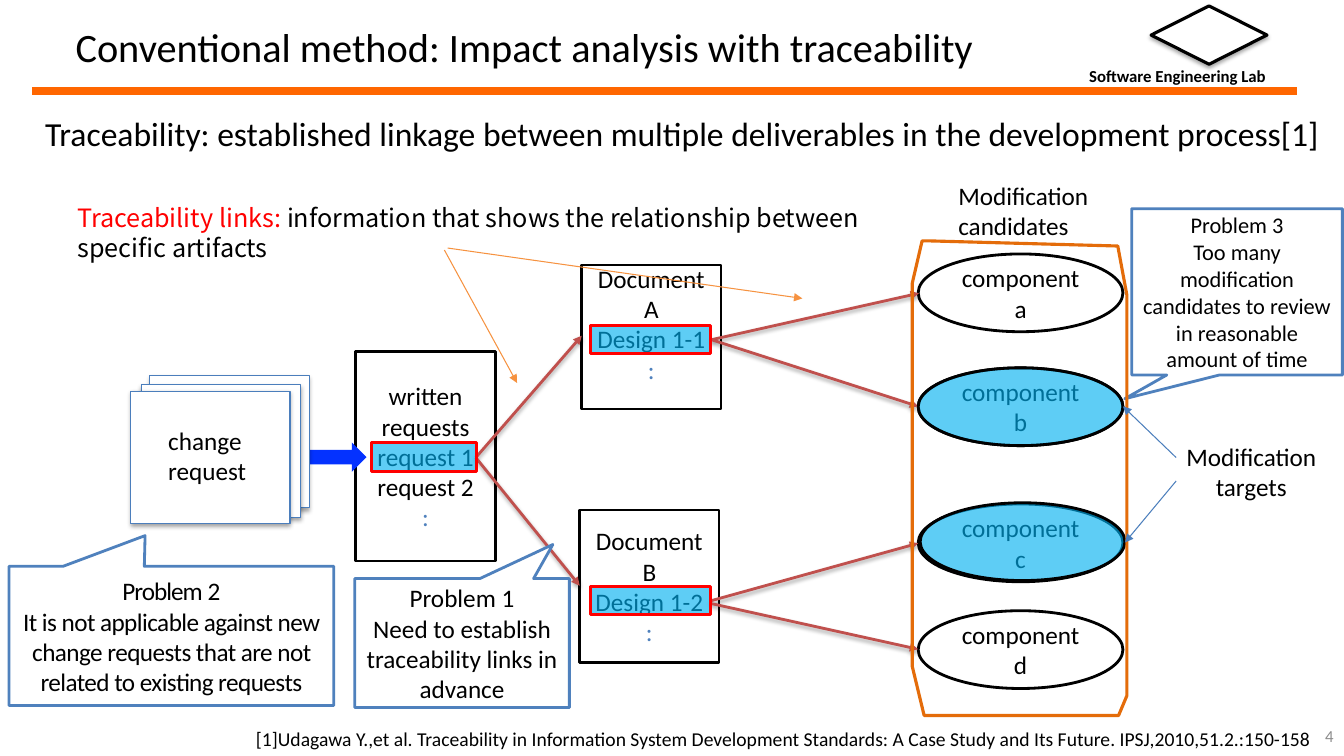
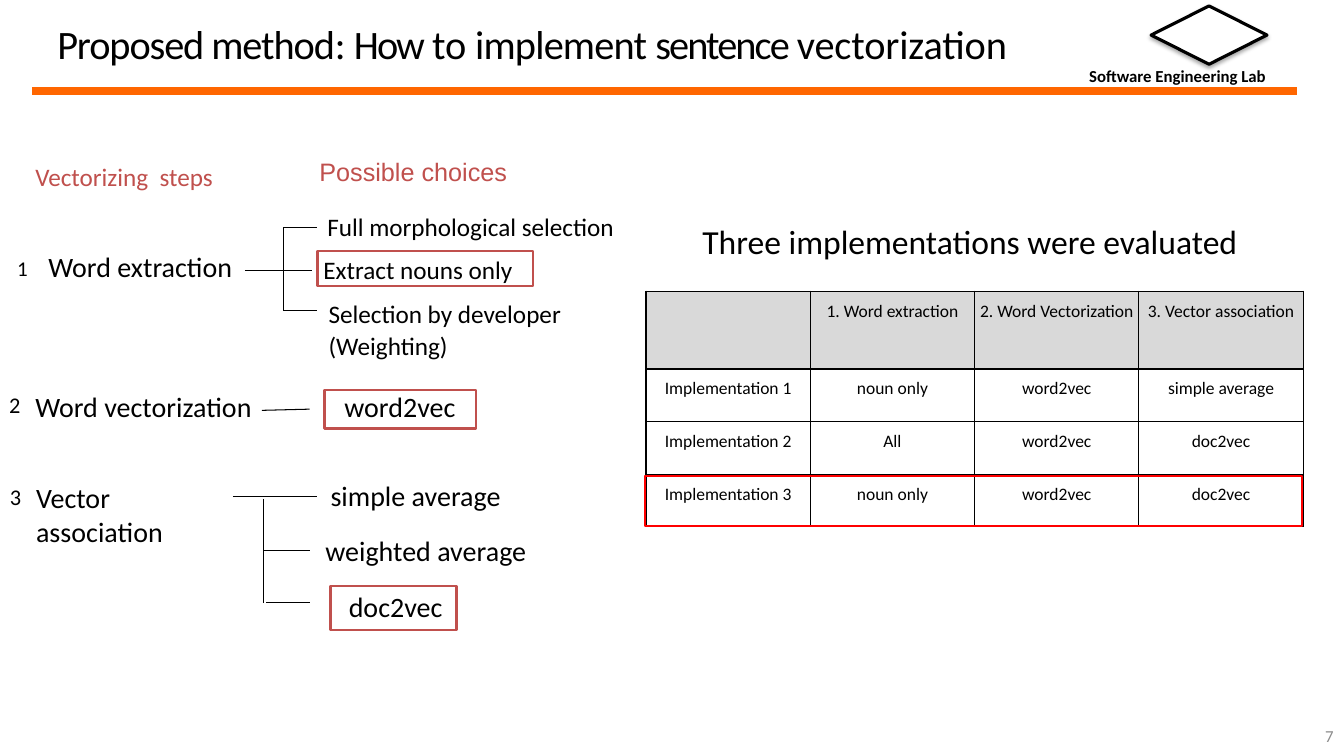
from dataclasses import dataclass
from typing import NamedTuple, Optional, Sequence

from lxml.etree import SubElement
from pptx import Presentation
from pptx.dml.color import RGBColor
from pptx.enum.shapes import MSO_CONNECTOR, MSO_SHAPE as Preset
from pptx.enum.text import MSO_ANCHOR as Anchor, MSO_AUTO_SIZE as AutoSize, PP_ALIGN as Align
from pptx.oxml.ns import qn
from pptx.util import Cm, Pt

BLACK = RGBColor(0x00, 0x00, 0x00)
WHITE = RGBColor(0xFF, 0xFF, 0xFF)
RED = RGBColor(0xFF, 0x00, 0x00)
BRICK = RGBColor(0xC0, 0x50, 0x4D)
BLUE = RGBColor(0x4F, 0x81, 0xBD)
EDGE_BLUE = RGBColor(0x4B, 0x7E, 0xBC)
VIVID_BLUE = RGBColor(0x04, 0x32, 0xFF)
SKY = RGBColor(0x00, 0xB0, 0xF0)
BAND = RGBColor(0xFF, 0x66, 0x00)
ORANGE = RGBColor(0xE4, 0x6C, 0x0A)
POINTER = RGBColor(0xF6, 0x92, 0x40)
GREY = RGBColor(0x8C, 0x8C, 0x8C)
HEADER = RGBColor(0xD9, 0xD9, 0xD9)


class Box(NamedTuple):
    """Left, top, width and height in centimetres."""
    left: float
    top: float
    width: float
    height: float

    def lengths(self) -> list:
        """Give the four values as lengths."""
        return [Cm(value) for value in self]


class Span(NamedTuple):
    """Text with its letter spacing and colour."""
    text: str
    spacing: float = 0
    color: RGBColor = BLACK


@dataclass(frozen=True)
class Style:
    """Look of the text in one frame."""
    size: float = 18
    color: RGBColor = BLACK
    font: str = "Calibri"
    bold: bool = False
    align: Align = Align.LEFT
    anchor: Anchor = Anchor.TOP
    tight: bool = False
    wrap: bool = True
    indent: float = 0
    before: float = 0


@dataclass(frozen=True)
class Label:
    """A text box."""
    box: Box
    lines: tuple
    style: Style = Style()


@dataclass(frozen=True)
class Figure:
    """A preset shape."""
    box: Box
    kind: Preset = Preset.RECTANGLE
    fill: Optional[RGBColor] = WHITE
    line: Optional[RGBColor] = BLACK
    weight: float = 2
    opacity: int = 100
    shadow: bool = False
    adjust: tuple = ()
    lines: tuple = ()
    style: Style = Style(align=Align.CENTER, anchor=Anchor.MIDDLE)


@dataclass(frozen=True)
class Stroke:
    """Line work shared by a set of connectors."""
    color: RGBColor = BLACK
    weight: float = 0.75
    arrow: bool = False
    shadow: bool = False


def write(frame, lines: Sequence, style: Style) -> None:
    """Fill a text frame; each line is a string or a tuple of spans."""
    frame.word_wrap = style.wrap
    frame.auto_size = AutoSize.NONE
    frame.vertical_anchor = style.anchor
    if style.tight:
        frame.margin_left = frame.margin_right = frame.margin_bottom = 0
        frame.margin_top = Cm(0.03)
    for index, line in enumerate(lines):
        para = frame.add_paragraph() if index else frame.paragraphs[0]
        para.alignment = style.align
        if style.before:
            para.space_before = Pt(style.before)
        if style.indent:
            properties = para._p.get_or_add_pPr()
            properties.set("marL", str(Cm(style.indent)))
            properties.set("indent", "0")
        spans = [Span(line, color=style.color)] if isinstance(line, str) else line
        for span in spans:
            run = para.add_run()
            run.text = span.text
            font = run.font
            font.name, font.size, font.bold = style.font, Pt(style.size), style.bold
            font.color.rgb = span.color
            if span.spacing:
                run._r.get_or_add_rPr().set("spc", str(round(span.spacing * 100)))


def cast_shadow(effects) -> None:
    """Add a soft shadow below to an effect list."""
    shadow = SubElement(effects, qn("a:outerShdw"), blurRad=str(Pt(3.1)), dist=str(Pt(1.8)),
                        dir="5400000", rotWithShape="0")
    color = SubElement(shadow, qn("a:srgbClr"), val=str(BLACK))
    SubElement(color, qn("a:alpha"), val="35000")


def paint(shape, figure: Figure) -> None:
    """Set fill, outline and shadow of a shape."""
    shape.shadow.inherit = False
    if figure.fill is None:
        shape.fill.background()
    else:
        shape.fill.solid()
        shape.fill.fore_color.rgb = figure.fill
    if figure.opacity < 100:
        color = shape.element.spPr.find(f"{qn('a:solidFill')}/{qn('a:srgbClr')}")
        SubElement(color, qn("a:alpha"), val=str(figure.opacity * 1000))
    if figure.line is None:
        shape.line.fill.background()
    else:
        shape.line.color.rgb = figure.line
        shape.line.width = Pt(figure.weight)
    if figure.shadow:
        cast_shadow(shape.element.spPr.find(qn("a:effectLst")))


def draw_figure(page, figure: Figure):
    """Draw a preset shape with its text."""
    shape = page.shapes.add_shape(figure.kind, *figure.box.lengths())
    for index, value in enumerate(figure.adjust):
        shape.adjustments[index] = value
    paint(shape, figure)
    if figure.lines:
        write(shape.text_frame, figure.lines, figure.style)
    return shape


def draw_label(page, label: Label) -> None:
    """Draw a text box."""
    box = page.shapes.add_textbox(*label.box.lengths())
    write(box.text_frame, label.lines, label.style)


def draw_lines(page, stroke: Stroke, routes: Sequence[tuple]) -> None:
    """Draw connectors given as start and end coordinates."""
    for route in routes:
        connector = page.shapes.add_connector(MSO_CONNECTOR.STRAIGHT, *map(Cm, route))
        connector.line.color.rgb = stroke.color
        connector.line.width = Pt(stroke.weight)
        outline = connector.element.spPr
        if stroke.arrow:
            SubElement(outline.find(qn("a:ln")), qn("a:tailEnd"), type="triangle")
        effects = SubElement(outline, qn("a:effectLst"))
        if stroke.shadow:
            cast_shadow(effects)


def start_page(deck, box: Box, title: tuple, number: int):
    """Add a page with the shared heading, band and page number."""
    page = deck.slides.add_slide(deck.slide_layouts[5])
    draw_lines(page, Stroke(BAND, 6), [(0.81, 2.29, 32.69, 2.29)])
    draw_label(page, Label(Box(27.2, 1.52, 5.03, 0.76), ("Software Engineering Lab",),
                           Style(12, bold=True, wrap=False)))
    draw_figure(page, Figure(Box(29.01, 0.15, 2.92, 1.47), Preset.FLOWCHART_DECISION,
                             weight=2.25, shadow=True))
    heading = page.shapes.title
    heading.left, heading.top, heading.width, heading.height = box.lengths()
    write(heading.text_frame, [title], Style(28.8, anchor=Anchor.MIDDLE))
    draw_label(page, Label(Box(25.96, 18.03, 7.9, 1.02), (str(number),),
                           Style(12, GREY, align=Align.RIGHT, anchor=Anchor.MIDDLE)))
    return page


def build_traceability(deck) -> None:
    """Build the page on impact analysis with traceability."""
    page = start_page(deck, Box(1.65, 0.08, 25.55, 2.18),
                      (Span("Conventional method: Impact analysis with traceability"),), 4)
    links = (Span("Traceability links: ", color=RED),
             Span("information that shows the relationship between specific artifacts"))
    for label in (
        Label(Box(0.89, 2.72, 32.69, 1.27),
              ("Traceability: established linkage between multiple deliverables "
               "in the development process[1]",), Style(24, before=0.9)),
        Label(Box(0, 4.98, 23.95, 1.8), (links,),
              Style(font="Noto Sans CJK JP", indent=1.7, before=3.2)),
        Label(Box(6.2, 18.19, 27.66, 0.86),
              ("[1]Udagawa Y.,et al. Traceability in Information System Development Standards: "
               "A Case Study and Its Future. IPSJ,2010,51.2.:150-158",), Style(14)),
        Label(Box(23.9, 4.42, 5.23, 1.78), ("Modification candidates",)),
        Label(Box(29.49, 11, 4.09, 1.8), ("Modification targets",), Style(align=Align.CENTER)),
    ):
        draw_label(page, label)

    dots = (Span(":", color=BLUE),)
    draw_figure(page, Figure(Box(8.97, 8.86, 3.51, 5.28),
                             lines=("written requests", "request 1", "request 2", dots)))
    document = draw_figure(page, Figure(Box(14.66, 6.68, 3.51, 3.63),
                                        lines=("DocumentA", "Design 1-1", dots)))
    document.text_frame.margin_bottom = Cm(0.8)
    draw_figure(page, Figure(Box(14.61, 12.85, 3.51, 3.84),
                             lines=("Document B", "Design 1-2", dots)))
    for letter, top in zip("abcd", (6.4, 9.27, 12.7, 15.39)):
        draw_figure(page, Figure(Box(23.14, top, 5.16, 1.96), Preset.OVAL,
                                 lines=(f"component {letter}",)))

    draw_lines(page, Stroke(BRICK, 2, arrow=True, shadow=True), [
        (11.99, 11.53, 14.66, 8.46), (11.99, 11.53, 14.61, 14.76),
        (17.93, 8.56, 23.16, 7.39), (17.93, 8.56, 23.14, 10.24),
        (17.91, 15.14, 23.14, 13.69), (17.93, 15.21, 23.14, 16.36)])
    draw_figure(page, Figure(Box(7.72, 11.15, 1.52, 0.74), Preset.RIGHT_ARROW, VIVID_BLUE, None))
    for box in (Box(23.14, 9.27, 5.16, 1.96), Box(23.19, 12.67, 5.16, 1.96)):
        draw_figure(page, Figure(box, Preset.OVAL, SKY, opacity=63))
    for box in (Box(9.37, 11.15, 2.64, 0.74), Box(14.88, 8.2, 3.02, 0.71),
                Box(14.88, 14.78, 3.02, 0.71)):
        draw_figure(page, Figure(box, fill=SKY, line=RED, opacity=63))
    draw_lines(page, Stroke(POINTER, arrow=True),
               [(11.2, 6.3, 13.03, 9.65), (11.28, 6.25, 20.22, 7.52)])

    for left, top in ((3.78, 9.47), (3.56, 9.7), (3.3, 9.86)):
        draw_figure(page, Figure(Box(left, top, 4.01, 3.33), line=EDGE_BLUE, weight=0.75,
                                 shadow=True))
    draw_figure(page, Figure(Box(3.99, 10.59, 3.07, 1.8), line=None,
                             lines=("change", "request"), style=Style()))

    centred = Figure.style
    not_applicable = ("It is not applicable against new change requests "
                      "that are not related to existing requests")
    for box, adjust, lines, style in (
        (Box(28.52, 5.26, 5.31, 4.19), (-0.533, 0.643),
         ("Problem 3", "Too many modification candidates to review in reasonable amount of time"),
         Style(16, align=Align.CENTER, anchor=Anchor.MIDDLE)),
        (Box(8.94, 14.58, 5.41, 3.25), (0.423, -0.764),
         ("Problem 1", "Need to establish traceability links in advance"), centred),
        (Box(0.23, 14.27, 8.18, 3.51), (-0.081, -0.72),
         ((Span("Problem ", -0.7), Span("2", -0.5)), (Span(not_applicable, -0.4),)),
         Style(align=Align.CENTER, anchor=Anchor.MIDDLE, before=0.8)),
    ):
        draw_figure(page, Figure(box, Preset.RECTANGULAR_CALLOUT, line=BLUE, adjust=adjust,
                                 lines=lines, style=style))

    corners = [(28.4, 7.44), (28.4, 17.53), (28.19, 18.03), (23.29, 18.03), (22.99, 16.79),
               (22.99, 7.14), (23.24, 6.07), (23.39, 6.07)]
    builder = page.shapes.build_freeform(Cm(28.17), Cm(6.2))
    builder.add_line_segments([(Cm(x), Cm(y)) for x, y in corners], close=True)
    paint(builder.convert_to_shape(), Figure(Box(0, 0, 0, 0), fill=None, line=ORANGE, weight=2.25))
    draw_lines(page, Stroke(EDGE_BLUE, arrow=True),
               [(29.64, 11.53, 28.3, 10.24), (29.64, 12.12, 28.35, 13.67)])


def draw_table(page, box: Box, heights: Sequence[float], rows: Sequence[tuple]) -> None:
    """Draw a ruled table with a grey header row."""
    table = page.shapes.add_table(len(rows), len(rows[0]), *box.lengths()).table
    table.first_row = table.horz_banding = False
    for column in table.columns:
        column.width = Cm(box.width / len(rows[0]))
    for index, values in enumerate(rows):
        table.rows[index].height = Cm(heights[index])
        for cell, value in zip(table.rows[index].cells, values):
            cell.margin_left = cell.margin_right = cell.margin_bottom = 0
            cell.margin_top = Cm(0.23)
            properties = cell._tc.get_or_add_tcPr()
            for side in ("a:lnL", "a:lnR", "a:lnT", "a:lnB"):
                border = SubElement(properties, qn(side), w=str(Pt(1)))
                SubElement(SubElement(border, qn("a:solidFill")), qn("a:srgbClr"), val=str(BLACK))
            cell.fill.solid()
            cell.fill.fore_color.rgb = WHITE if index else HEADER
            if value:
                para = cell.text_frame.paragraphs[0]
                para.text = value
                para.alignment = Align.CENTER
                font = para.runs[0].font
                font.name, font.size, font.color.rgb = "Calibri", Pt(12.5), BLACK


def build_vectorization(deck) -> None:
    """Build the page on sentence vectorization."""
    title = (Span("Proposed method", -0.8), Span(": ", -0.7), Span("How ", -1.4),
             Span("to ", -0.2), Span("implement ", -0.6), Span("sentence ", -1.4),
             Span("vectorization", -0.1))
    page = start_page(deck, Box(1.19, 0, 26.29, 2.18), title, 7)
    draw_table(page, Box(16.28, 7.34, 16.56, 5.93), (1.96, 1.32, 1.35, 1.3), (
        ("", "1. Word extraction", "2. Word Vectorization", "3. Vector association"),
        ("Implementation 1", "noun only", "word2vec", "simple average"),
        ("Implementation 2", "All", "word2vec", "doc2vec"),
        ("Implementation 3", "noun only", "word2vec", "doc2vec")))

    step, choice = Style(20, tight=True, before=0.9), Style(tight=True, before=0.9)
    for label in (
        Label(Box(17.45, 5.44, 15.95, 1.27), ("Three implementations were evaluated",), Style(24)),
        Label(Box(0.64, 3.94, 6.78, 1.02), ("Vectorizing  steps",), Style(color=BRICK)),
        Label(Box(7.8, 3.81, 8, 1.02), ("Possible choices",), Style(color=BRICK, font="Arial")),
        Label(Box(0.43, 6.4, 0.33, 0.69), ("1",), Style(15, tight=True)),
        Label(Box(0.23, 9.83, 0.33, 0.71), ("2",), Style(16, tight=True)),
        Label(Box(0.25, 12.14, 0.33, 0.71), ("3",), Style(16, tight=True)),
        Label(Box(1.22, 6.27, 5.05, 0.89), ("Word extraction",), step),
        Label(Box(0.64, 9.7, 6.07, 1.12), ("Word vectorization",), Style(20)),
        Label(Box(0.66, 11.99, 5.51, 1.96), ("Vector association",), Style(20, before=0.9)),
        Label(Box(8, 5.21, 8, 1.02), ("Full morphological selection",)),
        Label(Box(8.15, 6.38, 5.44, 0.81), ("Extract nouns only",), choice),
        Label(Box(8.28, 7.49, 6.81, 1.6), ("Selection by developer", "(Weighting)"), choice),
        Label(Box(8.18, 9.68, 3.99, 1.12), ("word2vec",), Style(20, indent=0.25, before=1.1)),
        Label(Box(8.33, 12.04, 4.42, 0.89), ("simple average",), step),
        Label(Box(8.2, 13.41, 5.21, 0.89), ("weighted average",), step),
        Label(Box(8.26, 14.73, 3.18, 1.12), ("doc2vec",), Style(20, indent=0.28, before=2.4)),
    ):
        draw_label(page, label)

    for box, color in ((Box(8, 6.32, 5.44, 0.89), BRICK), (Box(8.18, 9.83, 3.81, 0.97), BRICK),
                       (Box(8.33, 14.76, 3.18, 1.12), BRICK),
                       (Box(16.26, 11.99, 16.56, 1.27), RED)):
        draw_figure(page, Figure(box, fill=None, line=color, weight=1.69))
    draw_lines(page, Stroke(), [
        (7.14, 5.74, 7.14, 7.82), (7.14, 5.74, 8, 5.74), (6.17, 6.81, 7.87, 6.81),
        (7.14, 7.82, 8, 7.82), (6.6, 10.34, 7.8, 10.31), (5.87, 12.5, 8, 12.5),
        (6.63, 12.57, 6.63, 15.19), (6.63, 13.87, 7.82, 13.87), (6.71, 15.19, 7.82, 15.19)])


def main() -> None:
    """Build and save the deck."""
    deck = Presentation()
    deck.slide_width, deck.slide_height = Cm(33.87), Cm(19.05)
    build_traceability(deck)
    build_vectorization(deck)
    deck.save("out.pptx")


if __name__ == "__main__":
    main()
